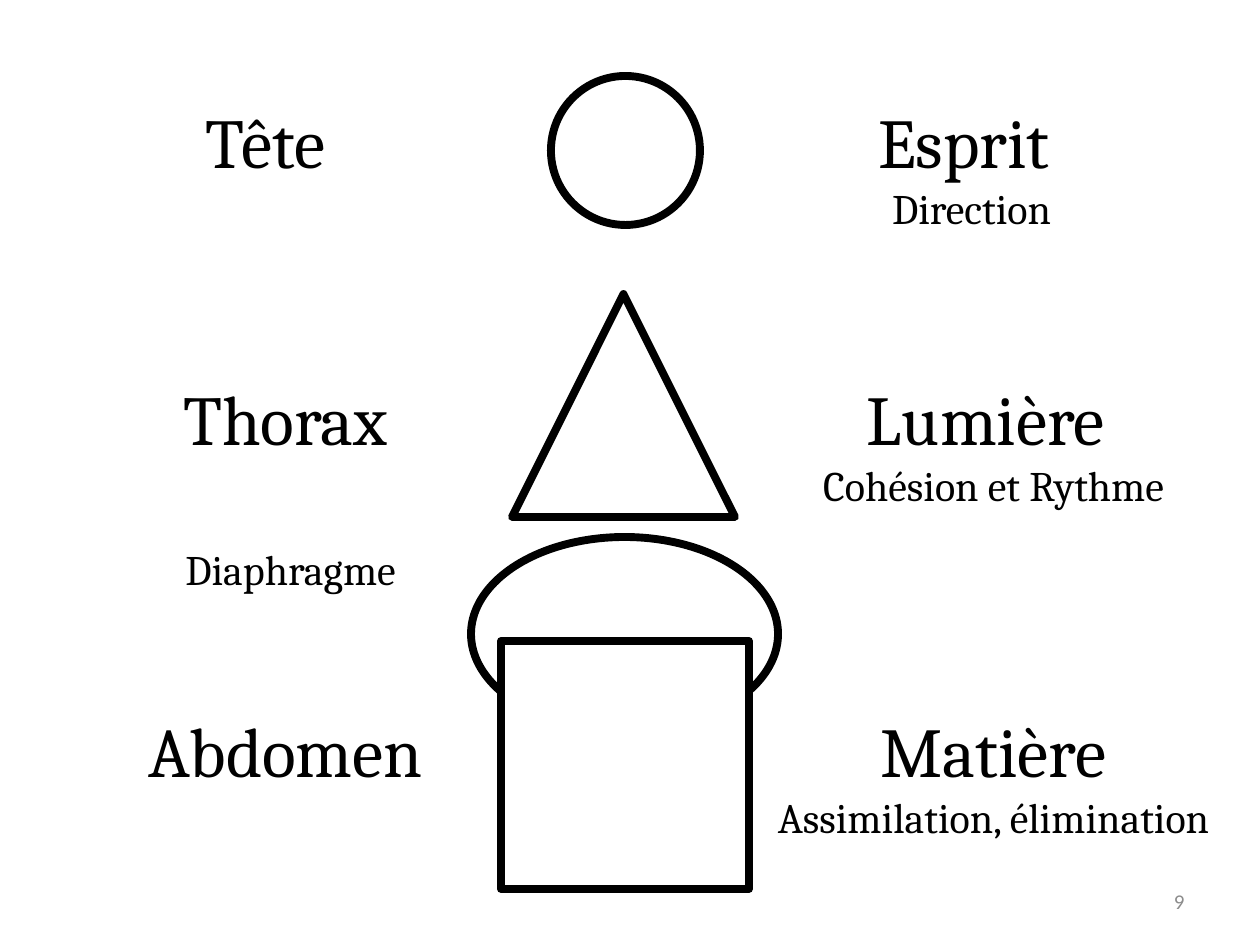
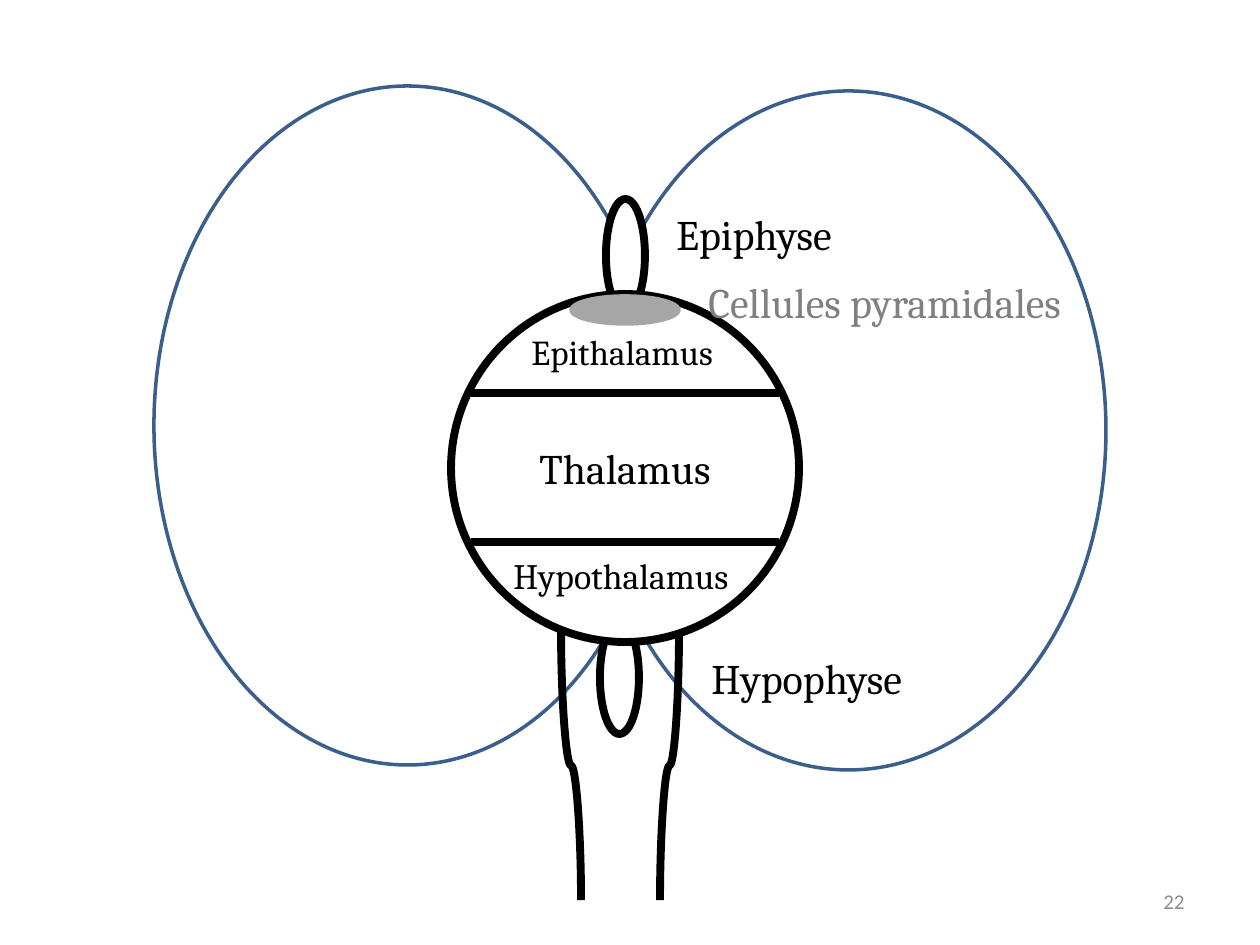
from lxml import etree
from pptx import Presentation
from pptx.dml.color import RGBColor
from pptx.enum.shapes import MSO_CONNECTOR as CONNECTOR, MSO_SHAPE as SHAPE
from pptx.enum.text import MSO_ANCHOR as ANCHOR, MSO_AUTO_SIZE as AUTO_SIZE, PP_ALIGN as ALIGN
from pptx.oxml.ns import qn
from pptx.util import Emu, Pt

COLORS = {
    "ink": "000000",
    "paper": "FFFFFF",
    "hemisphere": "3A5F8C",
    "cells": "A6A6A6",
    "cells_label": "808080",
    "number": "8C8C8C",
}
PX_PER_INCH = 126
FONT = "Cambria"
THICK, THIN = 4.5, 2
LABEL_WIDTH = 525
LARGE, MEDIUM, SMALL = 40, 24, 20


def px(length):
    """Turn pixels into EMU."""
    return Emu(round(length * 914400 / PX_PER_INCH))


def color(name):
    """Look up a colour of the palette."""
    return RGBColor.from_string(COLORS[name])


def write(shape, lines, align=ALIGN.LEFT, ink="ink", font=FONT):
    """Fill a shape with (text, size) lines in one style."""
    frame = shape.text_frame
    frame.word_wrap = True
    frame.text = "\n".join(text for text, _ in lines)
    for paragraph, (_, size) in zip(frame.paragraphs, lines):
        paragraph.alignment = align
        for run in paragraph.runs:
            run.font.name = font
            run.font.size = Pt(size)
            run.font.color.rgb = color(ink)
    return frame


def add_text(slide, box, lines, **style):
    """Add a wrapping text box and return its frame."""
    return write(slide.shapes.add_textbox(*map(px, box)), lines, **style)


def add_number(slide, number):
    """Add the slide number at the bottom right."""
    frame = add_text(slide, (903, 876, 294, 50), [(number, 12)],
                     align=ALIGN.RIGHT, ink="number", font="Calibri")
    frame.vertical_anchor = ANCHOR.MIDDLE


def add_outline(slide, kind, box, fill=None, line="ink", width=THICK):
    """Add an outlined preset shape, hollow unless a fill is named."""
    shape = slide.shapes.add_shape(kind, *map(px, box))
    shape.shadow.inherit = False
    if fill:
        shape.fill.solid()
        shape.fill.fore_color.rgb = color(fill)
    else:
        shape.fill.background()
    shape.line.color.rgb = color(line)
    shape.line.width = Pt(width)
    return shape


def add_line(slide, start, end, kind=CONNECTOR.STRAIGHT):
    """Add a thick connector without shadow."""
    connector = slide.shapes.add_connector(kind, *map(px, start + end))
    connector.line.color.rgb = color("ink")
    connector.line.width = Pt(THICK)
    etree.SubElement(connector._element.spPr, qn("a:effectLst"))
    return connector


def add_stem_side(slide, start, end):
    """Add a curve that leaves its start and reaches its end vertically."""
    (x1, y1), (x2, y2) = start, end
    length, shift = y2 - y1, abs(x2 - x1)
    left, top = (x1 + x2 - length) / 2, (y1 + y2 - shift) / 2
    curve = add_line(slide, (left, top), (left + length, top + shift), CONNECTOR.CURVE)
    transform = curve._element.spPr.find(qn("a:xfrm"))
    leans_right = x2 > x1
    transform.set("rot", str((270 if leans_right else 90) * 60000))
    if leans_right:
        transform.set("flipH", "1")


def add_figure(slide):
    """Draw the body as circle, triangle, dome and square."""
    add_outline(slide, SHAPE.ISOSCELES_TRIANGLE, (512, 294, 223, 223))
    add_outline(slide, SHAPE.OVAL, (551, 76, 149, 149))
    add_outline(slide, SHAPE.OVAL, (471, 537, 307, 194))
    add_outline(slide, SHAPE.RECTANGLE, (501, 641, 248, 248), fill="paper")


def add_label(slide, left, top, lines):
    """Add a centred label that grows with its text."""
    height = sum(97 if size == LARGE else 52 for _, size in lines)
    frame = add_text(slide, (left, top, LABEL_WIDTH, height), lines, align=ALIGN.CENTER)
    frame.auto_size = AUTO_SIZE.SHAPE_TO_FIT_TEXT


def build_body_slide(slide):
    """Build the slide that pairs body parts with principles."""
    add_figure(slide)
    rows = [
        (92, 3, "Tête", 709, "Esprit ", "Direction"),
        (369, 23, "Thorax", 731, "Lumière ", "Cohésion et Rythme"),
        (701, 23, "Abdomen", 731, "Matière", "Assimilation, élimination"),
    ]
    for top, part_left, part, principle_left, principle, role in rows:
        add_label(slide, principle_left, top, [(principle, LARGE), (role, MEDIUM)])
        add_label(slide, part_left, top, [(part, LARGE)])
    add_label(slide, 28, 537, [("Diaphragme", MEDIUM)])
    add_number(slide, "9")


def add_thalamus(slide, left, top, size):
    """Draw the thalamus circle with its two dividing lines."""
    circle = add_outline(slide, SHAPE.OVAL, (left, top, size, size), fill="paper")
    frame = write(circle, [("Thalamus", MEDIUM)], align=ALIGN.CENTER)
    frame.vertical_anchor = ANCHOR.MIDDLE
    for offset in (248, 99):
        add_line(slide, (left + 20, top + offset), (left + size - 20, top + offset))


def build_brain_slide(slide):
    """Build the slide of the thalamus between the hemispheres."""
    for box in ((154, 86, 507, 679), (591, 91, 515, 679)):
        add_outline(slide, SHAPE.OVAL, box, line="hemisphere", width=THIN)
    add_outline(slide, SHAPE.OVAL, (600, 621, 39, 113))
    add_outline(slide, SHAPE.OVAL, (606, 199, 39, 113), fill="paper")
    add_thalamus(slide, 451, 294, 348)
    add_stem_side(slide, (561, 631), (581, 900))
    add_stem_side(slide, (679, 631), (660, 900))
    labels = [
        (519, 324, "Epithalamus", SMALL),
        (501, 548, "Hypothalamus", 20.4),
        (699, 646, "Hypophyse", MEDIUM),
        (664, 202, "Epiphyse", MEDIUM),
    ]
    for left, top, text, size in labels:
        add_text(slide, (left, top, 260, 63), [(text, size)])
    add_outline(slide, SHAPE.OVAL, (571, 296, 108, 28), fill="cells", line="cells", width=THIN)
    add_text(slide, (696, 270, 411, 63), [("Cellules pyramidales", MEDIUM)], ink="cells_label")
    add_number(slide, "22")


def main():
    """Build and save the presentation."""
    presentation = Presentation()
    presentation.slide_width, presentation.slide_height = px(1260), px(945)
    blank = presentation.slide_layouts[6]
    for build in (build_body_slide, build_brain_slide):
        build(presentation.slides.add_slide(blank))
    presentation.save("out.pptx")


if __name__ == "__main__":
    main()
